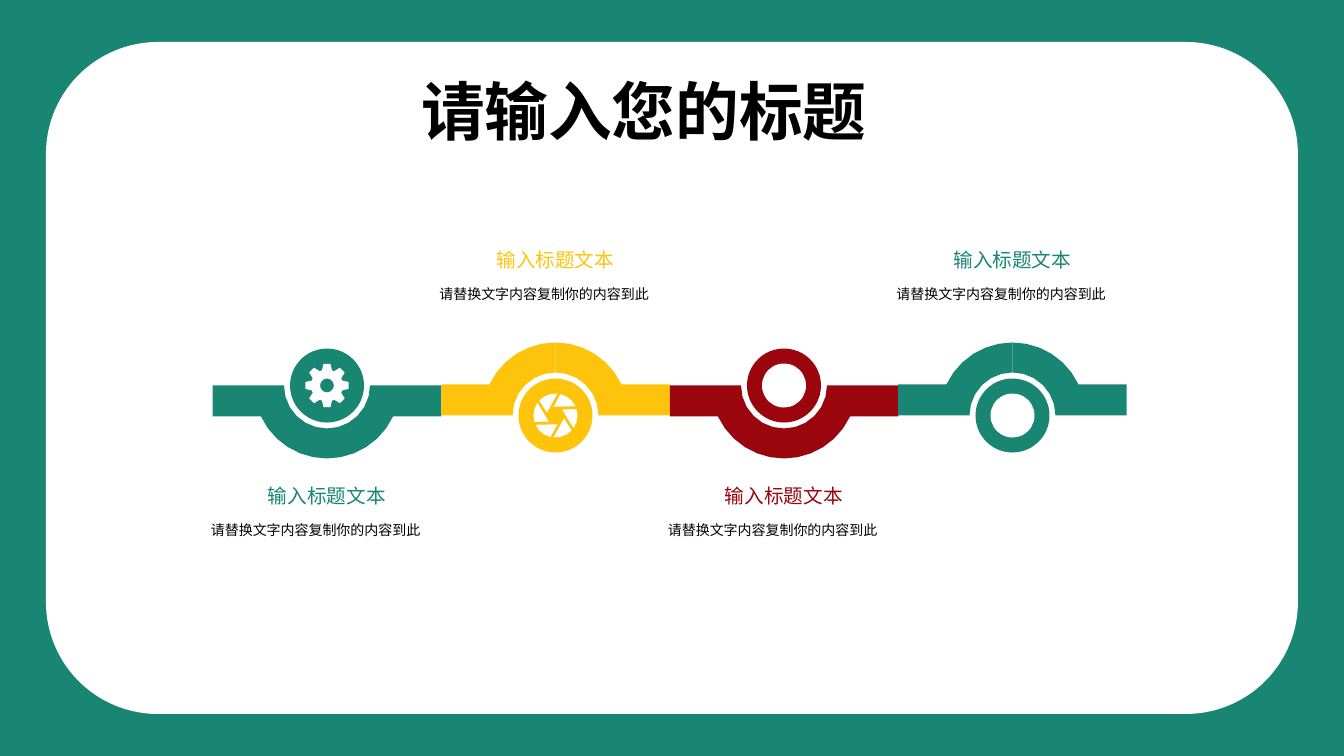
from dataclasses import dataclass
from math import asin, cos, degrees, radians, sin

from lxml.etree import SubElement
from pptx import Presentation
from pptx.dml.color import RGBColor
from pptx.enum.shapes import MSO_SHAPE as Kind
from pptx.enum.text import MSO_ANCHOR as Anchor, MSO_AUTO_SIZE as Fit, PP_ALIGN as Align
from pptx.oxml.ns import qn
from pptx.util import Emu, Pt

SCALE = 914400 / 100.8
HUES = {"teal": "198673", "gold": "FEC40C", "red": "9B050E",
        "white": "FFFFFF", "black": "000000"}
FACE = "Noto Sans CJK JP"

# Measures of the chain and one link, in px
FIRST, SPAN = 327, 914
PITCH = SPAN / 4
HALF, BAND = PITCH / 2, 31
LOW, HIGH = 801 / 2 - 15, 801 / 2 + 15
OUTER, INNER = 73, 43
DISC, ICON = 37, 22

Point = tuple[float, float]


@dataclass
class Link:
    hue: str
    icon: str
    up: bool


LINKS = [
    Link("teal", "gear", False),
    Link("gold", "lens", True),
    Link("red", "dot", False),
    Link("teal", "dot", True),
]


def px(size: float) -> Emu:
    return Emu(round(size * SCALE))


def tint(name: str) -> RGBColor:
    return RGBColor.from_string(HUES[name])


def paint(shape, hue: str) -> None:
    shape.shadow.inherit = False
    shape.fill.solid()
    shape.fill.fore_color.rgb = tint(hue)
    shape.line.fill.background()


def polar(rad: float, ang: float) -> Point:
    return rad * cos(radians(ang)), rad * sin(radians(ang))


def arc(rad: float, start: float, end: float, steps: int) -> list[Point]:
    return [polar(rad, start + (end - start) * i / steps) for i in range(steps + 1)]


def draw(shapes, rings: list[list[Point]], x: float, y: float, hue: str) -> None:
    """Draw closed rings around the centre x, y as one outline."""
    pen = None
    for ring in rings:
        spots = [(px(x + dx), px(y + dy)) for dx, dy in ring]
        if pen is None:
            pen = shapes.build_freeform(*spots[0], scale=1.0)
        else:
            pen.move_to(*spots[0])
        pen.add_line_segments(spots[1:], close=True)
    paint(pen.convert_to_shape(), hue)


def disc(shapes, x: float, y: float, rad: int, hue: str) -> None:
    paint(shapes.add_shape(Kind.OVAL, px(x - rad), px(y - rad), px(2 * rad), px(2 * rad)), hue)


def bend(side: int, turn: int) -> list[Point]:
    """Half a band: a straight bar that runs into a quarter ring."""
    edge = degrees(asin(BAND / OUTER))
    ring = [(HALF, 0), *arc(INNER, 0, 90, 6), *arc(OUTER, 90, edge, 6), (HALF, BAND)]
    return [(side * x, turn * y) for x, y in ring]


def gear() -> list[list[Point]]:
    tooth = [(16, -18), (ICON, -9), (ICON, 9), (16, 18)]
    rim = [polar(rad, 45 * i + ang) for i in range(8) for rad, ang in tooth]
    return [rim, arc(7, 360, 30, 11)]


def lens() -> list[list[Point]]:
    return [[*arc(ICON, ang, ang - 52, 3), polar(9, ang - 77)]
            for ang in range(-85, 275, 60)]


def write(shape, text: str, size: float, hue: str, face: str):
    frame = shape.text_frame
    frame.text = text
    para = frame.paragraphs[0]
    para.alignment = Align.LEFT
    font = para.runs[0].font
    font.size, font.name = Pt(size), face
    font.color.rgb = tint(hue)
    return frame


def label(shapes, x: float, y: int, link: Link) -> None:
    head = shapes.add_textbox(px(x - 69), px(y), px(139), px(34))
    write(head, "输入标题文本", 14, link.hue, "Arial").word_wrap = False
    body = shapes.add_textbox(px(x - 126), px(y + 34), px(253), px(61))
    frame = write(body, "请替换文字内容复制你的内容到此", 10, "black", "Arial")
    frame.word_wrap = True
    frame.paragraphs[0].line_spacing = 1.2


def chain(shapes, x: float, link: Link) -> None:
    y, turn = (HIGH, -1) if link.up else (LOW, 1)
    label(shapes, x, 243 if link.up else 479, link)
    for side in (1, -1):
        draw(shapes, [bend(side, turn)], x, y, link.hue)
    disc(shapes, x, y, DISC, link.hue)
    if link.icon == "dot":
        disc(shapes, x, y, ICON, "white")
    else:
        draw(shapes, gear() if link.icon == "gear" else lens(), x, y, "white")


def heading(title) -> None:
    title.left, title.top, title.width, title.height = px(421), px(71), px(459), px(78)
    frame = write(title, "请输入您的标题", 45.5, "black", FACE)
    frame.margin_left = frame.margin_right = frame.margin_top = frame.margin_bottom = 0
    frame.word_wrap, frame.auto_size = False, Fit.NONE
    frame.vertical_anchor = Anchor.MIDDLE
    para = frame.paragraphs[0]
    para.line_spacing = 1.0
    para.runs[0].font.bold = True
    for props in title.element.iter(qn("a:rPr")):
        SubElement(props, qn("a:ea"), typeface=FACE)


def main() -> None:
    deck = Presentation()
    deck.slide_width, deck.slide_height = px(1344), px(756)
    slide = deck.slides.add_slide(deck.slide_layouts[5])
    shapes = slide.shapes

    # Backdrop and panel
    back = slide.background.fill
    back.solid()
    back.fore_color.rgb = tint("teal")
    panel = shapes.add_shape(Kind.ROUNDED_RECTANGLE, px(46), px(42), px(1252), px(672))
    paint(panel, "white")

    # Chain of links
    for i, link in enumerate(LINKS):
        chain(shapes, FIRST + i * PITCH, link)

    # Title, brought in front of the panel
    title = shapes.title
    heading(title)
    title.element.getparent().append(title.element)

    deck.save("out.pptx")


if __name__ == "__main__":
    main()
